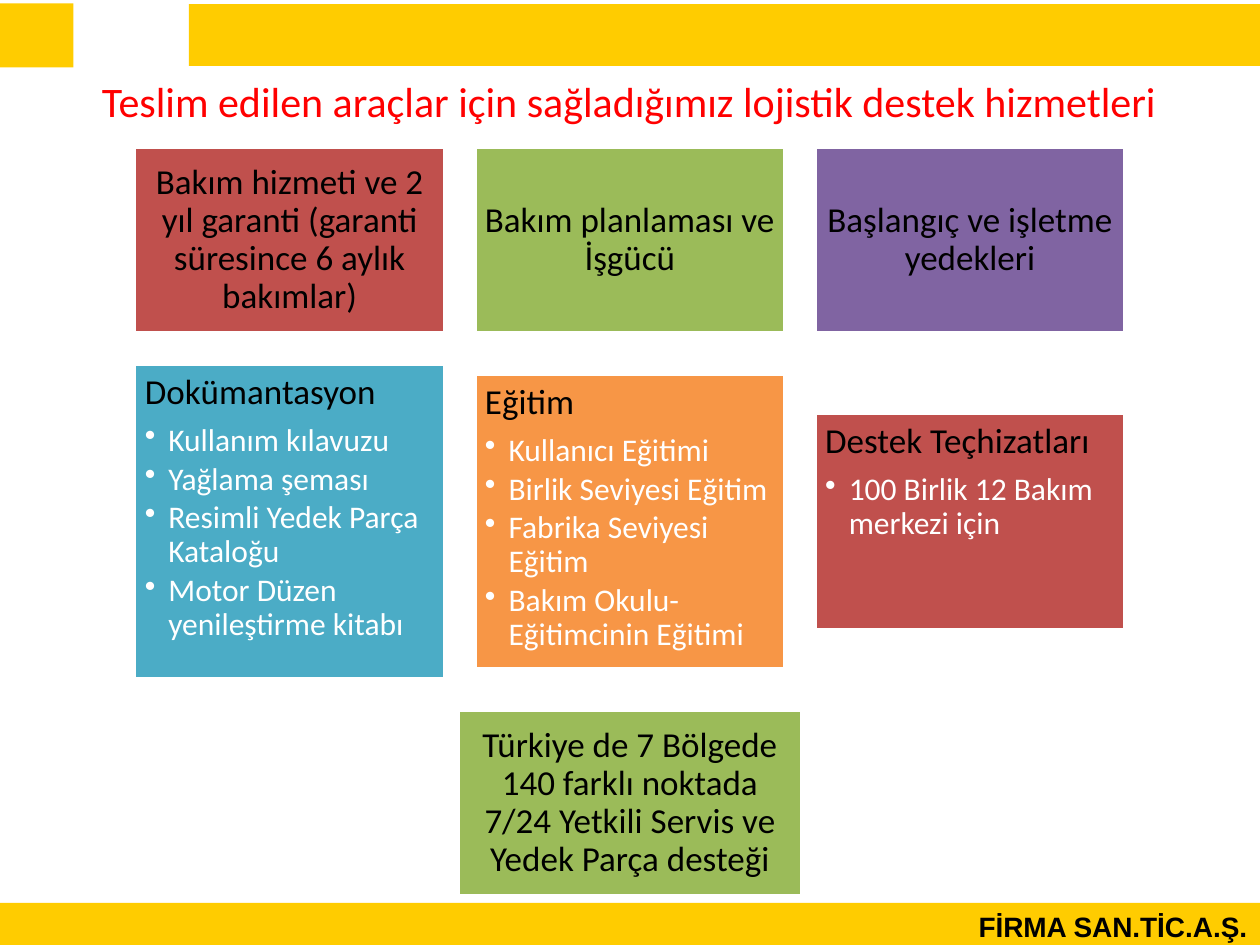
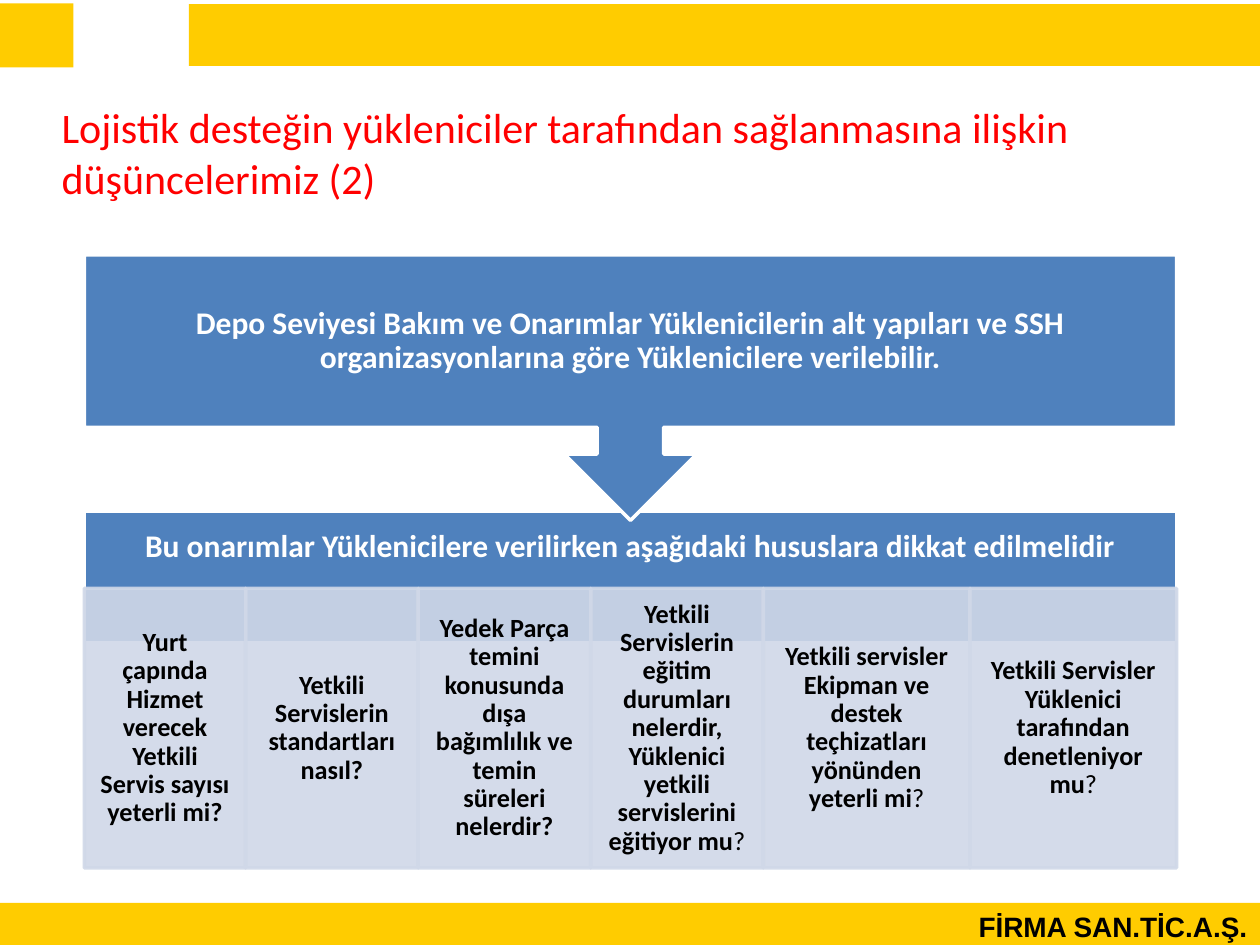
import pptx
import pptx.util
import pptx.dml.color
import pptx.enum.shapes
import pptx.enum.text
from lxml import etree

Pt = pptx.util.Pt
RGB = pptx.dml.color.RGBColor
KIND = pptx.enum.shapes.MSO_SHAPE
ALIGN = pptx.enum.text.PP_ALIGN
ANCHOR = pptx.enum.text.MSO_ANCHOR
FIT = pptx.enum.text.MSO_AUTO_SIZE

BLACK = RGB(0x00, 0x00, 0x00)
WHITE = RGB(0xFF, 0xFF, 0xFF)
YELLOW = RGB(0xFF, 0xCC, 0x00)
TITLE = RGB(0xFF, 0x00, 0x00)
RED = RGB(0xC0, 0x50, 0x4D)
GREEN = RGB(0x9B, 0xBB, 0x59)
PURPLE = RGB(0x80, 0x64, 0xA2)
TEAL = RGB(0x4B, 0xAC, 0xC6)
ORANGE = RGB(0xF7, 0x96, 0x46)
BLUE = RGB(0x4F, 0x81, 0xBD)
PALE = RGB(0xD0, 0xD8, 0xE8)

# Paragraph formats
CENTER = {"alignment": ALIGN.CENTER, "line_spacing": 0.9, "space_after": Pt(7)}
HEAD = {"alignment": ALIGN.LEFT, "line_spacing": 0.9, "space_after": Pt(7)}
ITEM = {"alignment": ALIGN.LEFT, "line_spacing": 0.9, "space_after": Pt(2.7), "level": 1}
RIGHT = {"alignment": ALIGN.RIGHT}
LEFT = {"alignment": ALIGN.LEFT}

# Font formats
LARGE = {"name": "Calibri", "size": Pt(24)}
MAIN = {"name": "Calibri", "size": Pt(20)}
SMALL = {"name": "Calibri", "size": Pt(18)}
STRONG = {"name": "Calibri", "size": Pt(18), "bold": True}
CELL = {"name": "Calibri", "size": Pt(15), "bold": True}
FOOT = {"name": "Arial", "size": Pt(16), "bold": True}


def box(slide, area, fill, edge=None, kind=KIND.RECTANGLE, pad=None):
    shape = slide.shapes.add_shape(kind, *map(Pt, area))
    shape.shadow.inherit = False
    shape.fill.solid()
    shape.fill.fore_color.rgb = fill
    if edge is None:
        shape.line.fill.background()
    else:
        shape.line.color.rgb = edge
        shape.line.width = Pt(2)
    frame = shape.text_frame
    frame.vertical_anchor = ANCHOR.MIDDLE
    if pad:
        for side, gap in zip(("left", "top", "right", "bottom"), pad):
            setattr(frame, "margin_" + side, Pt(gap))
    return shape


def say(para, text, form, face, color):
    for key, value in form.items():
        setattr(para, key, value)
    run = para.add_run()
    run.text = text
    for key, value in face.items():
        setattr(run.font, key, value)
    run.font.color.rgb = color


deck = pptx.Presentation()
deck.slide_width, deck.slide_height = Pt(720), Pt(540)

# Shared bands, footer and title
titles = [
    ("Teslim edilen araçlar için sağladığımız lojistik destek hizmetleri",
     (51.1, 39.6, 621.4, 36)),
    ("Lojistik desteğin yükleniciler tarafından sağlanmasına ilişkin düşüncelerimiz (2)",
     (28.1, 54.7, 660.2, 65.5)),
]
for text, area in titles:
    slide = deck.slides.add_slide(deck.slide_layouts[6])
    box(slide, (0, 2, 42, 36.5), YELLOW)
    box(slide, (108, 2.3, 612, 35.4), YELLOW)
    frame = box(slide, (0, 516, 720, 24), YELLOW).text_frame
    frame.vertical_anchor = ANCHOR.TOP
    say(frame.paragraphs[0], "FİRMA SAN.TİC.A.Ş.", RIGHT, FOOT, BLACK)
    frame = slide.shapes.add_textbox(*map(Pt, area)).text_frame
    frame.word_wrap = True
    frame.auto_size = FIT.SHAPE_TO_FIT_TEXT
    say(frame.paragraphs[0], text, LEFT, LARGE, TITLE)

first, second = deck.slides

# Slide 1: service blocks
START, STEP, WIDE, TALL = 77, 194.4, 177.1, 105.8
PAD = (5.76,) * 4
blocks = [
    ("Bakım hizmeti ve 2 yıl garanti (garanti süresince 6 aylık bakımlar)", RED),
    ("Bakım planlaması ve İşgücü", GREEN),
    ("Başlangıç ve işletme yedekleri", PURPLE),
]
areas = [(START + STEP * col, 84.3, WIDE, TALL) for col in range(3)]
blocks.append(("Türkiye de 7 Bölgede 140 farklı noktada 7/24 Yetkili Servis ve "
               "Yedek Parça desteği", GREEN))
areas.append((262, 406.1, 196, TALL))
for (text, fill), area in zip(blocks, areas):
    shape = box(first, area, fill, WHITE, pad=PAD)
    say(shape.text_frame.paragraphs[0], text, CENTER, MAIN, BLACK)

# Slide 1: blocks with lists, centred on one line
MID = 298.1
lists = [
    ("Dokümantasyon", TEAL, 180,
     ["Kullanım kılavuzu", "Yağlama şeması", "Resimli Yedek Parça Kataloğu",
      "Motor Düzen yenileştirme kitabı"]),
    ("Eğitim", ORANGE, 168.6,
     ["Kullanıcı Eğitimi", "Birlik Seviyesi Eğitim", "Fabrika Seviyesi Eğitim",
      "Bakım Okulu-Eğitimcinin Eğitimi"]),
    ("Destek Teçhizatları", RED, 123.8, ["100 Birlik 12 Bakım merkezi için"]),
]
for col, (head, fill, high, items) in enumerate(lists):
    area = (START + STEP * col, MID - high / 2, WIDE, high)
    frame = box(first, area, fill, WHITE, pad=PAD).text_frame
    frame.vertical_anchor = ANCHOR.TOP
    say(frame.paragraphs[0], head, HEAD, MAIN, BLACK)
    for item in items:
        para = frame.add_paragraph()
        props = para._p.get_or_add_pPr()
        props.set("marL", str(Pt(13.5)))
        props.set("indent", str(-Pt(13.5)))
        bullet = etree.SubElement(props, pptx.oxml.ns.qn("a:buChar"))
        bullet.set("char", "•")
        say(para, item, ITEM, SMALL, WHITE)

# Slide 2: lower bar, its text kept above the cells
EDGE, SPAN = 48.2, 624.2
bar = box(second, (EDGE, 292.3, SPAN, 75), BLUE, WHITE, pad=(10, 10, 10, 44.6))
say(bar.text_frame.paragraphs[0],
    "Bu onarımlar Yüklenicilere verilirken aşağıdaki hususlara dikkat edilmelidir",
    CENTER, STRONG, WHITE)

# Slide 2: question cells side by side
cells = [
    (92.2, "Yurt çapında Hizmet verecek Yetkili Servis sayısı yeterli mi?", ""),
    (98.6, "Yetkili Servislerin standartları nasıl?", ""),
    (98.6, "Yedek Parça temini konusunda dışa bağımlılık ve temin süreleri nelerdir?", ""),
    (98.6, "Yetkili Servislerin eğitim durumları nelerdir, Yüklenici yetkili "
           "servislerini eğitiyor mu", "?"),
    (118.1, "Yetkili servisler Ekipman ve destek teçhizatları yönünden yeterli mi", "?"),
    (118.1, "Yetkili Servisler Yüklenici tarafından denetleniyor mu", "?"),
]
left = EDGE
for wide, text, tail in cells:
    shape = box(second, (left, 336.2, wide, 159.8), PALE, PALE, pad=(8.5, 1.5, 8.5, 1.5))
    for color in shape._element.spPr.iter(pptx.oxml.ns.qn("a:srgbClr")):
        etree.SubElement(color, pptx.oxml.ns.qn("a:alpha")).set("val", "90000")
    para = shape.text_frame.paragraphs[0]
    say(para, text, CENTER, CELL, BLACK)
    if tail:
        say(para, tail, CENTER, {**CELL, "bold": False}, BLACK)
    left += wide

# Slide 2: upper bar with its arrow
call = box(second, (EDGE, 145.6, SPAN, 151.8), BLUE, WHITE,
           KIND.DOWN_ARROW_CALLOUT, (10,) * 4)
say(call.text_frame.paragraphs[0],
    "Depo Seviyesi Bakım ve Onarımlar Yüklenicilerin alt yapıları ve SSH "
    "organizasyonlarına göre Yüklenicilere verilebilir.", CENTER, STRONG, WHITE)

deck.save("out.pptx")
